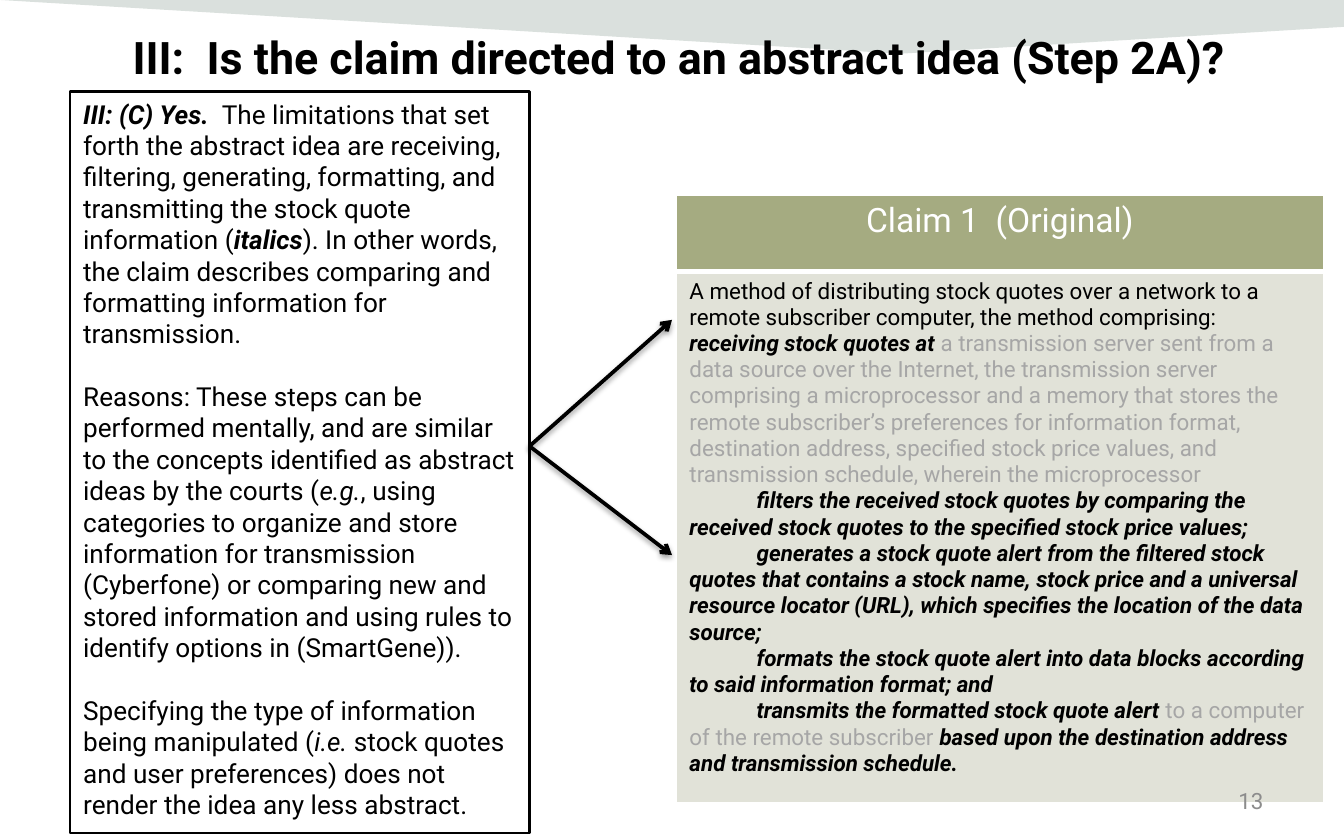
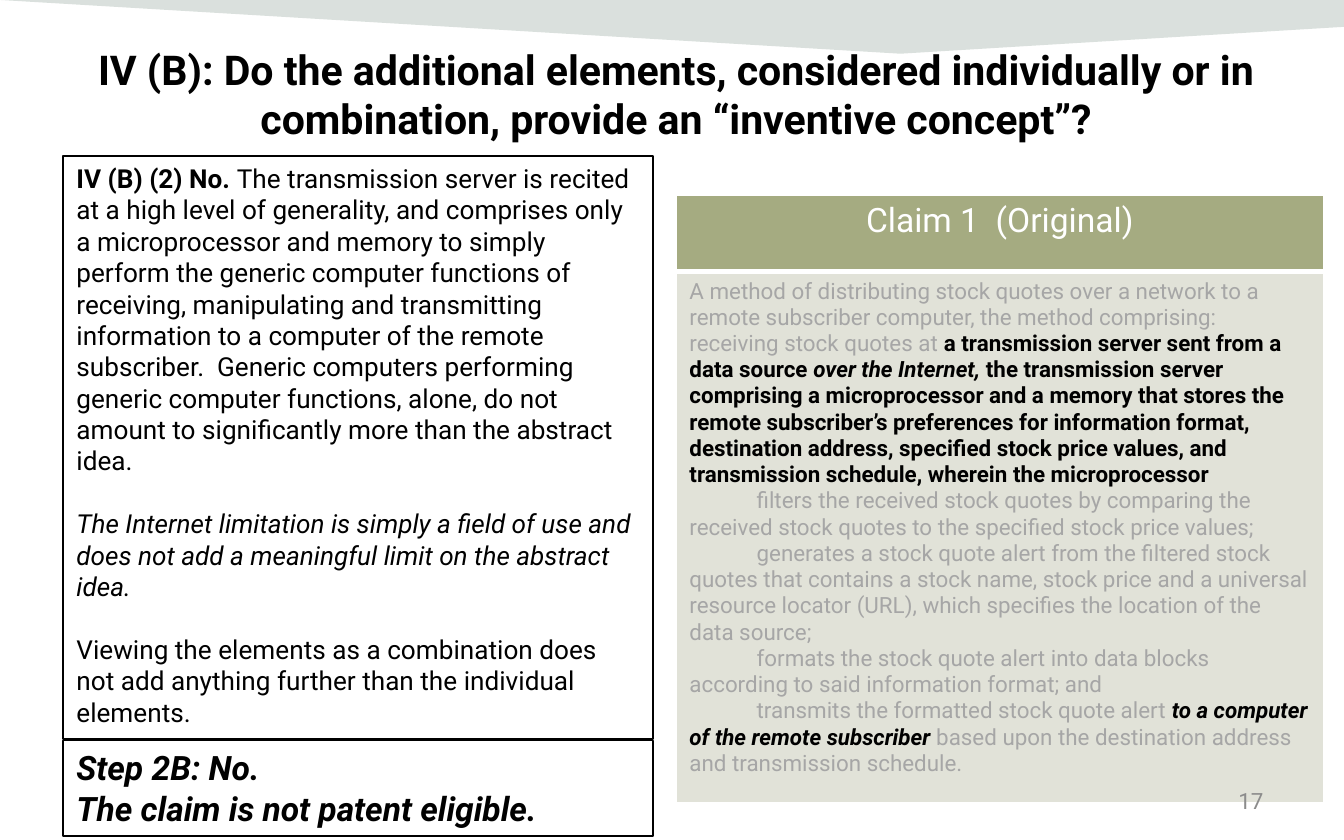
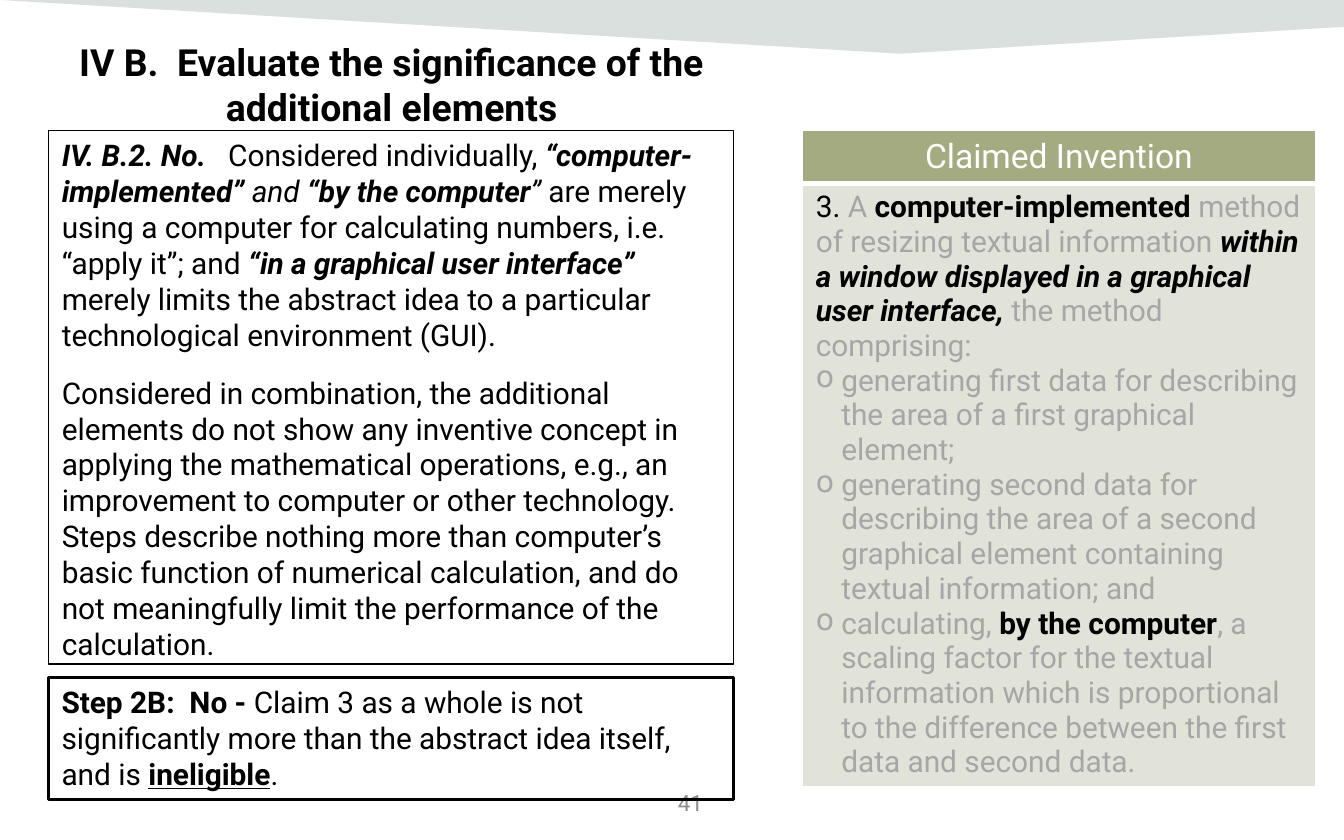
from dataclasses import dataclass
from typing import Any, NamedTuple

from lxml.etree import SubElement
from pptx import Presentation
from pptx.dml.color import RGBColor
from pptx.enum.shapes import MSO_CONNECTOR, MSO_SHAPE
from pptx.enum.text import MSO_ANCHOR, MSO_AUTO_SIZE, PP_ALIGN
from pptx.oxml.ns import qn
from pptx.util import Emu, Inches, Pt

COLS, ROWS = 100, 62.5
CELL = Inches(0.1)
FONT = "Roboto"
BLACK, WHITE, GREY, DIM = "000000", "FFFFFF", "A6A6A6", "8C8C8C"
OLIVE, PALE, GREEN = "A5AB81", "E1E2D8", "09331C"
LEFT, MID, RIGHT = PP_ALIGN.LEFT, PP_ALIGN.CENTER, PP_ALIGN.RIGHT


class Area(NamedTuple):
    col: float
    row: float
    wide: float
    high: float


class Run(NamedTuple):
    text: str
    style: str = ""


@dataclass
class Para:
    runs: list[Run]
    gap: float = 0
    align: Any = LEFT
    left: float = 0
    first: float = 0
    mark: str = ""


@dataclass
class Panel:
    area: Area
    paras: list[Para]
    size: float
    line: float = 0.75
    fill: str = ""


@dataclass
class Claim:
    area: Area
    head: str
    split: float
    paras: list[Para]
    size: float


@dataclass
class Page:
    title: str
    spot: Area
    size: float
    number: str
    corner: Area
    claim: Claim
    panels: list[Panel]
    body: Panel | None = None
    arrows: tuple = ()


def grid(*units: float) -> list[Emu]:
    return [Emu(round(unit * CELL)) for unit in units]


def color(code: str) -> RGBColor:
    return RGBColor.from_string(code)


def assign(item: Any, values: dict) -> None:
    for name, value in values.items():
        setattr(item, name, value)


def place(shape: Any, area: Area) -> None:
    assign(shape, dict(zip(("left", "top", "width", "height"), grid(*area))))


def write(frame: Any, paras: list[Para], size: float, ink: str = BLACK) -> None:
    for index, para in enumerate(paras):
        line = frame.paragraphs[0] if index == 0 else frame.add_paragraph()
        props = line._p.get_or_add_pPr()
        props.set("marL", str(Inches(para.left)))
        props.set("indent", str(Inches(para.first)))
        if para.mark:
            SubElement(props, qn("a:buChar"), char=para.mark)
        else:
            SubElement(props, qn("a:buNone"))
        assign(line, {"alignment": para.align, "space_before": Pt(para.gap),
                      "space_after": Pt(0)})
        for part in para.runs:
            run = line.add_run()
            run.text = part.text
            assign(run.font, {"name": FONT, "size": Pt(size),
                              "bold": "b" in part.style,
                              "italic": "i" in part.style,
                              "underline": "u" in part.style})
            run.font.color.rgb = color(GREY if "g" in part.style else ink)


def set_frame(frame: Any, anchor: Any = MSO_ANCHOR.TOP) -> None:
    assign(frame, {"word_wrap": True, "auto_size": MSO_AUTO_SIZE.NONE,
                   "vertical_anchor": anchor})


def draw_band(slide: Any) -> None:
    form = slide.shapes.build_freeform(0, 0, CELL)
    form.add_line_segments([(COLS, 0), (COLS, 2.1), (66.9, 4.1)], close=True)
    band = form.convert_to_shape()
    band.shadow.inherit = False
    band.line.fill.background()
    band.fill.solid()
    band.fill.fore_color.rgb = color(GREEN)
    tint = band.element.find(".//" + qn("a:srgbClr"))
    SubElement(tint, qn("a:alpha"), val="15000")
    slide.slide_layout.slide_master.shapes.element.insert(2, band.element)


def draw_panel(shape: Any, panel: Panel) -> None:
    place(shape, panel.area)
    if panel.fill:
        shape.fill.solid()
        shape.fill.fore_color.rgb = color(panel.fill)
    else:
        shape.fill.background()
    shape.line.color.rgb = color(BLACK)
    shape.line.width = Pt(panel.line)
    set_frame(shape.text_frame)
    write(shape.text_frame, panel.paras, panel.size)


def set_cell(cell: Any, fill: str, base: float) -> None:
    cell.fill.solid()
    cell.fill.fore_color.rgb = color(fill)
    props = cell._tc.get_or_add_tcPr()
    for index, (side, width) in enumerate(zip("LRTB", (1, 1, 1, base))):
        edge = SubElement(props, qn(f"a:ln{side}"), w=str(Pt(width)))
        paint = SubElement(edge, qn("a:solidFill"))
        SubElement(paint, qn("a:srgbClr"), val=WHITE)
        props.insert(index, edge)


def draw_claim(slide: Any, claim: Claim) -> None:
    table = slide.shapes.add_table(2, 1, *grid(*claim.area)).table
    table.horz_banding = False
    for row, high in zip(table.rows, (claim.split, claim.area.high - claim.split)):
        row.height = grid(high)[0]
    top, low = table.cell(0, 0), table.cell(1, 0)
    set_cell(top, OLIVE, 3)
    set_cell(low, PALE, 1)
    write(top.text_frame, [Para([Run(claim.head)], align=MID)], 18, WHITE)
    write(low.text_frame, claim.paras, claim.size)


def draw_arrow(slide: Any, ends: tuple) -> None:
    arrow = slide.shapes.add_connector(MSO_CONNECTOR.STRAIGHT, *grid(*ends))
    arrow.line.color.rgb = color(BLACK)
    arrow.line.width = Pt(2)
    SubElement(arrow.line._get_or_add_ln(), qn("a:tailEnd"), type="arrow")
    effects = SubElement(arrow.element.spPr, qn("a:effectLst"))
    shade = SubElement(effects, qn("a:outerShdw"), blurRad=str(Pt(3.1)),
                       dist=str(Pt(1.6)), dir="5400000", rotWithShape="0")
    tint = SubElement(shade, qn("a:srgbClr"), val=BLACK)
    SubElement(tint, qn("a:alpha"), val="38000")


def draw_page(deck: Any, page: Page) -> Any:
    slide = deck.slides.add_slide(deck.slide_layouts[1 if page.body else 5])
    title = slide.shapes.title
    place(title, page.spot)
    set_frame(title.text_frame)
    write(title.text_frame, [Para([Run(page.title, "b")], align=MID)], page.size)
    if page.body:
        draw_panel(slide.placeholders[1], page.body)
    draw_claim(slide, page.claim)
    number = slide.shapes.add_textbox(*grid(*page.corner)).text_frame
    set_frame(number, MSO_ANCHOR.MIDDLE)
    write(number, [Para([Run(page.number)], align=RIGHT)], 12, DIM)
    for panel in page.panels:
        shape = slide.shapes.add_shape(MSO_SHAPE.RECTANGLE, *grid(*panel.area))
        shape.shadow.inherit = False
        draw_panel(shape, panel)
    for ends in page.arrows:
        draw_arrow(slide, ends)
    return slide


QUOTES = [
    ["A method of distributing stock quotes over a network to a remote subscriber "
     "computer, the method comprising:"],
    ["receiving stock quotes at ",
     "a transmission server sent from a data source ",
     "over the Internet, ",
     "the transmission server comprising a microprocessor and a memory that stores "
     "the remote subscriber’s preferences for information format, destination "
     "address, specified stock price values, and transmission schedule, wherein "
     "the microprocessor"],
    ["filters the received stock quotes by comparing the received stock quotes to "
     "the specified stock price values;"],
    ["generates a stock quote alert from the filtered stock quotes that contains a "
     "stock name, stock price and a universal resource locator (URL), which "
     "specifies the location of the data source;"],
    ["formats the stock quote alert into data blocks according to said information "
     "format; and"],
    ["transmits the formatted stock quote alert ",
     "to a computer of the remote subscriber ",
     "based upon the destination address and transmission schedule."],
]


def quote_claim(styles: list[list[str]]) -> Claim:
    paras = [Para([Run(*pair) for pair in zip(texts, marks)],
                  first=0.5 if index > 1 else 0)
             for index, (texts, marks) in enumerate(zip(QUOTES, styles))]
    return Claim(Area(50.3, 14.5, 48.2, 45.2), "Claim 1  (Original)", 5.7, paras, 12)


def item(*runs: Run) -> Para:
    return Para(list(runs), left=0.19, first=-0.19, mark="o")


LINE = 16.8
CORNER = Area(71.7, 57.9, 23.3, 3.3)
PAGES = [
    Page(
        "III:  Is the claim directed to an abstract idea (Step 2A)?",
        Area(5.5, 1.7, 90, 6.5), 24, "13", CORNER,
        quote_claim([[""], ["bi", "g", "g", "g"], ["bi"], ["bi"], ["bi"],
                     ["bi", "g", "bi"]]),
        [Panel(Area(5.2, 6.8, 34.2, 55.2), [
            Para([Run("III: (C) Yes.  ", "bi"),
                  Run("The limitations that set forth the abstract idea are receiving, "
                      "filtering, generating, formatting, and transmitting the stock "
                      "quote information ("),
                  Run("italics", "bi"),
                  Run("). In other words, the claim describes comparing and formatting "
                      "information for transmission.")]),
            Para([Run("Reasons: These steps can be performed mentally, and are similar "
                      "to the concepts identified as abstract ideas by the courts ("),
                  Run("e.g.", "i"),
                  Run(", using categories to organize and store information for "
                      "transmission (Cyberfone) or comparing new and stored information "
                      "and using rules to identify options in (SmartGene)).")], LINE),
            Para([Run("Specifying the type of information being manipulated ("),
                  Run("i.e.", "i"),
                  Run(" stock quotes and user preferences) does not render the idea any "
                      "less abstract.")], LINE),
        ], 14, 1.25, WHITE)],
        arrows=((39.4, 33.2, 50, 41.3), (39.4, 33.2, 50, 23.8)),
    ),
    Page(
        "IV (B): Do the additional elements, considered individually or in "
        "combination, provide an “inventive concept”?",
        Area(5.3, 2.8, 90, 9.7), 22, "17", CORNER,
        quote_claim([["g"], ["g", "b", "bi", "b"], ["g"], ["g"], ["g"],
                     ["g", "bi", "g"]]),
        [Panel(Area(4.7, 11.6, 43.9, 43.4), [
            Para([Run("IV (B) (2) No. ", "b"),
                  Run("The transmission server is recited at a high level of "
                      "generality, and comprises only a microprocessor and memory to "
                      "simply perform the generic computer functions of receiving, "
                      "manipulating and transmitting information to a computer of the "
                      "remote subscriber.  Generic computers performing generic "
                      "computer functions, alone, do not amount to significantly more "
                      "than the abstract idea.")]),
            Para([Run("The Internet limitation is simply a field of use and does not "
                      "add a meaningful limit on the abstract idea.", "i")], LINE),
            Para([Run("Viewing the elements as a combination does not add anything "
                      "further than the individual elements.")], LINE),
        ], 14),
         Panel(Area(4.7, 55.1, 43.9, 7.1), [
             Para([Run("Step 2B: No.", "bi")]),
             Para([Run("The claim is not patent eligible.", "bi")]),
         ], 18)],
    ),
    Page(
        "IV B.  Evaluate the significance of the additional elements",
        Area(2.6, 2.4, 53.1, 8.8), 20, "41", Area(30, 58.1, 23.3, 3.3),
        Claim(Area(59.7, 9.7, 38.2, 48.7), "Claimed Invention", 3.8, [
            Para([Run("3. "), Run("A ", "g"), Run("computer‐implemented ", "b"),
                  Run("method of resizing textual information ", "g"),
                  Run("within a window displayed in a graphical user interface, ", "bi"),
                  Run("the method comprising:", "g")]),
            item(Run("generating first data for describing the area of a first "
                     "graphical element;", "g")),
            item(Run("generating second data for describing the area of a second "
                     "graphical element containing textual information; and", "g")),
            item(Run("calculating, ", "g"), Run("by the computer", "b"),
                 Run(", a scaling factor for the textual information which is "
                     "proportional to the difference between the first data and "
                     "second data.", "g")),
        ], 16),
        [Panel(Area(3.6, 50.4, 51, 9.1), [
            Para([Run("Step 2B:  No - ", "b"),
                  Run("Claim 3 as a whole is not significantly more than the abstract "
                      "idea itself, and is "),
                  Run("ineligible", "bu"), Run(".")]),
        ], 16, 1.5)],
        body=Panel(Area(3.6, 9.7, 51, 39.7), [
            Para([Run("IV. B.2. No.  ", "bi"), Run(" Considered individually, "),
                  Run("“computer-implemented”", "bi"), Run(" and ", "i"),
                  Run("“by the computer", "bi"), Run("” ", "i"),
                  Run("are merely using a computer for calculating numbers, i.e. "
                      "“apply it”; and "),
                  Run("“in a graphical user interface” ", "bi"),
                  Run("merely limits the abstract idea to a particular technological "
                      "environment (GUI).")]),
            Para([Run("Considered in combination, the additional elements do not show "
                      "any inventive concept in applying the mathematical operations, "
                      "e.g., an improvement to computer or other technology.  Steps "
                      "describe nothing more than computer’s basic function of "
                      "numerical calculation, and do not meaningfully limit the "
                      "performance of the calculation.")], 12),
        ], 16),
    ),
]


def main() -> None:
    deck = Presentation()
    deck.slide_width, deck.slide_height = grid(COLS, ROWS)
    slides = [draw_page(deck, page) for page in PAGES]
    draw_band(slides[0])
    deck.save("out.pptx")


if __name__ == "__main__":
    main()
